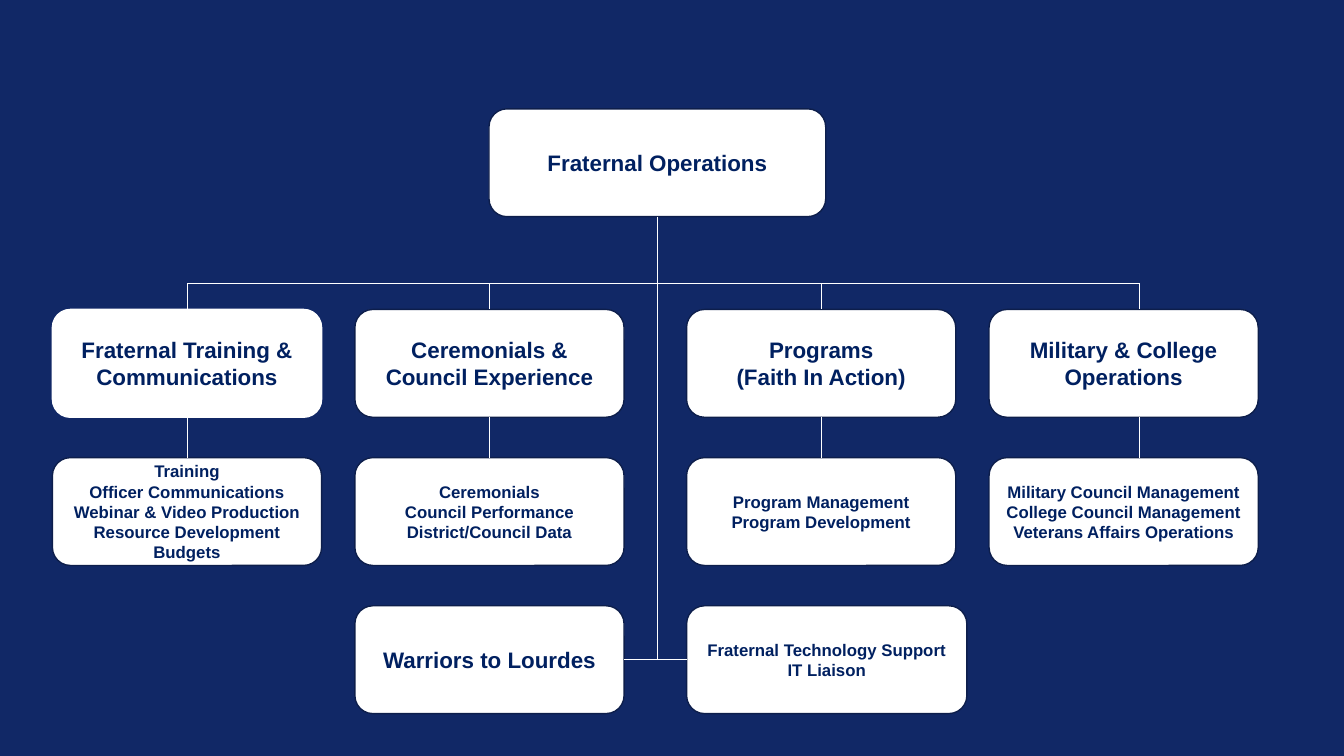
from dataclasses import dataclass

from lxml.etree import SubElement
from pptx import Presentation
from pptx.dml.color import RGBColor
from pptx.enum.shapes import MSO_CONNECTOR as Connector, MSO_SHAPE as Preset
from pptx.enum.text import MSO_ANCHOR as Anchor, PP_ALIGN as Align
from pptx.oxml.ns import qn
from pptx.util import Inches, Pt

TOP, LEFT, BOTTOM, RIGHT = range(4)


@dataclass(frozen=True)
class Theme:
    background: str = "112866"
    box: str = "FFFFFF"
    border: str = "0D1E4B"
    link: str = "FFFFFF"
    text: str = "002060"
    font: str = "Arial"
    heading_size: float = 16
    detail_size: float = 12
    border_width: float = 1
    link_width: float = 0.5


@dataclass(frozen=True)
class Grid:
    """Left edges of the columns and top edges of the rows, in inches."""
    columns: tuple = (0.52, 3.52, 6.81, 9.81)
    rows: tuple = (1.08, 3.07, 4.54, 6.01)
    width: float = 2.67
    height: float = 1.07
    root_left: float = 4.85
    root_width: float = 3.34
    support_width: float = 2.78
    trunk: float = 6.52
    bus: float = 2.81
    last_stem: float = 11.3


class OrgChart:
    def __init__(self, slide, theme, grid):
        self.slide, self.theme, self.grid = slide, theme, grid
        fill = slide.background.fill
        fill.solid()
        fill.fore_color.rgb = RGBColor.from_string(theme.background)

    def box(self, left, row, lines, size, width=None, border=None):
        """Rounded white box with one centred paragraph per line."""
        theme, grid = self.theme, self.grid
        shape = self.slide.shapes.add_shape(
            Preset.ROUNDED_RECTANGLE, Inches(left), Inches(grid.rows[row]),
            Inches(width or grid.width), Inches(grid.height))
        shape.shadow.inherit = False
        shape.fill.solid()
        shape.fill.fore_color.rgb = RGBColor.from_string(theme.box)
        shape.line.color.rgb = RGBColor.from_string(border or theme.border)
        shape.line.width = Pt(theme.border_width)
        frame = shape.text_frame
        frame.word_wrap = True
        frame.vertical_anchor = Anchor.MIDDLE
        for index, line in enumerate(lines):
            paragraph = frame.add_paragraph() if index else frame.paragraphs[0]
            paragraph.alignment = Align.CENTER
            run = paragraph.add_run()
            run.text = line
            run.font.name = theme.font
            run.font.size = Pt(size)
            run.font.bold = True
            run.font.color.rgb = RGBColor.from_string(theme.text)
        return shape

    def link(self, start, end, begin=None, finish=None):
        """Thin line between two points; begin and finish are (box, side)."""
        connector = self.slide.shapes.add_connector(
            Connector.STRAIGHT, *map(Inches, start + end))
        connector.line.color.rgb = RGBColor.from_string(self.theme.link)
        connector.line.width = Pt(self.theme.link_width)
        SubElement(connector._element.spPr, qn("a:effectLst"))
        if begin:
            connector.begin_connect(*begin)
        if finish:
            connector.end_connect(*finish)

    def branch(self, column, department, team, stem=None):
        """Bus to department to team; a given stem runs beside the centre."""
        grid = self.grid
        x = stem or grid.columns[column] + grid.width / 2
        joined = stem is None
        self.link((x, grid.bus), (x, grid.rows[1]),
                  finish=(department, TOP) if joined else None)
        self.link((x, grid.rows[1] + grid.height), (x, grid.rows[2]),
                  (department, BOTTOM) if joined else None,
                  (team, TOP) if joined else None)


BRANCHES = [
    (["Fraternal Training & Communications"],
     ["Training", "Officer Communications", "Webinar & Video Production",
      "Resource Development", "Budgets"]),
    (["Ceremonials & Council Experience"],
     ["Ceremonials", "Council Performance", "District/Council Data"]),
    (["Programs", "(Faith In Action)"],
     ["Program Management", "Program Development"]),
    (["Military & College Operations"],
     ["Military Council Management", "College Council Management",
      "Veterans Affairs Operations"]),
]


def main():
    presentation = Presentation()
    presentation.slide_width = Inches(13.33)
    presentation.slide_height = Inches(7.5)
    slide = presentation.slides.add_slide(presentation.slide_layouts[6])
    theme, grid = Theme(), Grid()
    chart = OrgChart(slide, theme, grid)

    # Root box
    root = chart.box(grid.root_left, 0, ["Fraternal Operations"],
                     theme.heading_size, grid.root_width)

    # Departments with their teams
    last = len(BRANCHES) - 1
    for column, (heading, details) in enumerate(BRANCHES):
        left = grid.columns[column]
        department = chart.box(left, 1, heading, theme.heading_size,
                               border=None if column else theme.box)
        team = chart.box(left, 2, details, theme.detail_size)
        chart.branch(column, department, team,
                     grid.last_stem if column == last else None)

    # Bottom row
    warriors = chart.box(grid.columns[1], 3, ["Warriors to Lourdes"],
                         theme.heading_size)
    support = chart.box(grid.columns[2], 3,
                        ["Fraternal Technology Support", "IT Liaison"],
                        theme.detail_size, grid.support_width)

    # Trunk, bus and bottom link
    middle = grid.rows[3] + grid.height / 2
    chart.link((grid.trunk, grid.rows[0] + grid.height),
               (grid.trunk, grid.bus), begin=(root, BOTTOM))
    chart.link((grid.trunk, grid.bus), (grid.trunk, middle))
    chart.link((grid.columns[0] + grid.width / 2, grid.bus),
               (grid.last_stem, grid.bus))
    chart.link((grid.columns[2], middle),
               (grid.columns[1] + grid.width, middle),
               (support, LEFT), (warriors, RIGHT))

    presentation.save("out.pptx")


if __name__ == "__main__":
    main()
